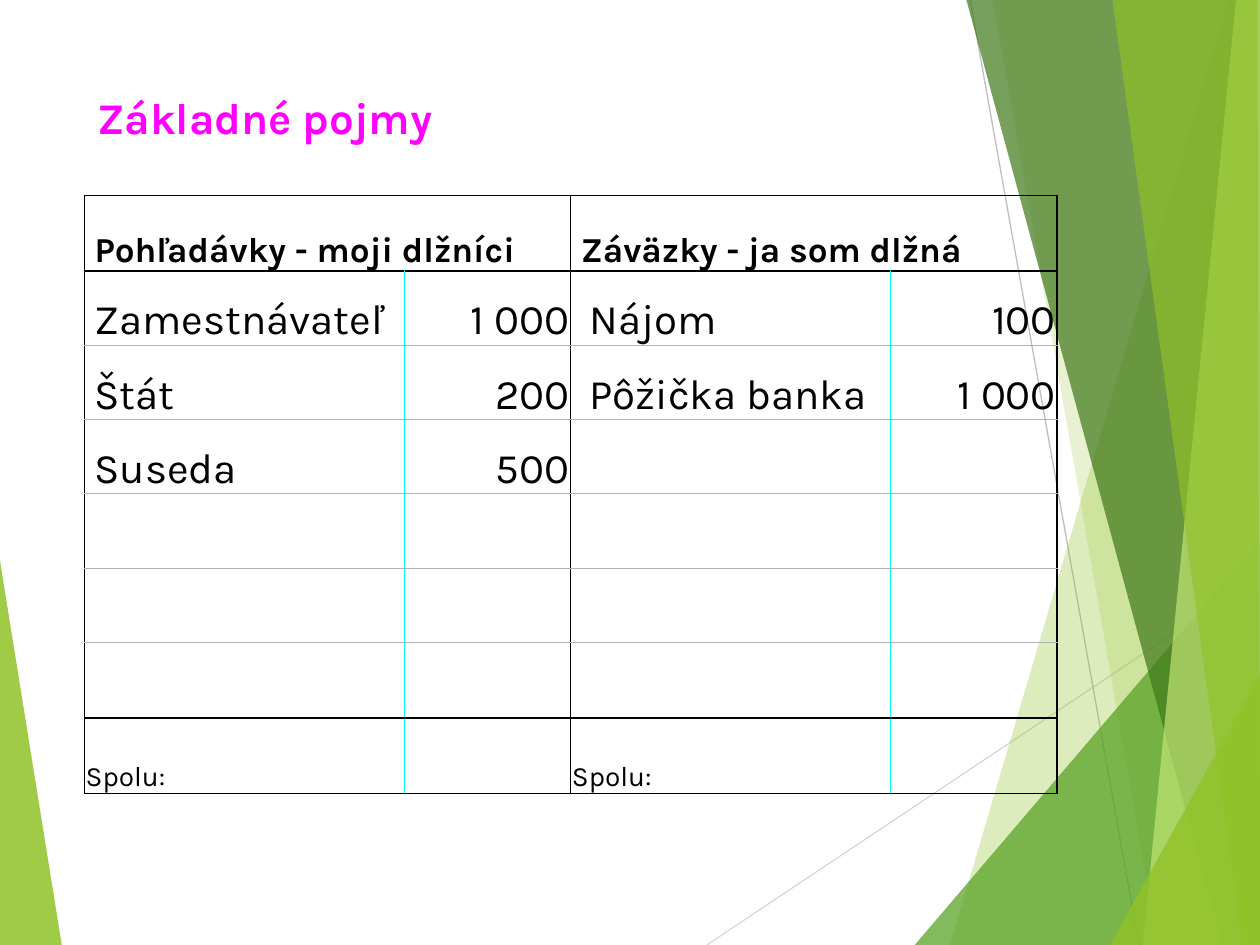
from lxml import etree
from pptx import Presentation
from pptx.dml.color import RGBColor
from pptx.enum.shapes import MSO_CONNECTOR
from pptx.enum.text import MSO_ANCHOR, PP_ALIGN
from pptx.oxml.ns import qn
from pptx.util import Inches, Pt

LINE = MSO_CONNECTOR.STRAIGHT
TOP, BOTTOM = MSO_ANCHOR.TOP, MSO_ANCHOR.BOTTOM
LEFT, RIGHT = PP_ALIGN.LEFT, PP_ALIGN.RIGHT

BLACK = RGBColor(0x00, 0x00, 0x00)
PINK = RGBColor(0xFF, 0x00, 0xFF)
CYAN = RGBColor(0x00, 0xFF, 0xFF)
GREY = RGBColor(0xB2, 0xB2, 0xB2)
PALE = RGBColor(0xD9, 0xD9, 0xD9)
SILVER = RGBColor(0xBF, 0xBF, 0xBF)
LIME = RGBColor(0x90, 0xC2, 0x26)
GREEN = RGBColor(0x54, 0xA0, 0x21)
DARK = RGBColor(0x3F, 0x78, 0x19)
LIGHT = RGBColor(0xC0, 0xE4, 0x74)

WIDE, HIGH = 10, 7.5
SOLID, THIN = (BLACK, 1), (CYAN, 0.5)
RULE = (GREY, 0.5)

# colour, opacity in percent, corners
LEAF = (LIME, 85, [(0, 4.45), (0.49, HIGH), (0, HIGH)])
FACETS = [
    (LIME, 30, [(9.75, 0), (7.54, HIGH), (WIDE, HIGH), (WIDE, 0)]),
    (LIME, 20, [(7.88, 0), (9.19, HIGH), (WIDE, HIGH), (WIDE, 0)]),
    (GREEN, 72, [(7.26, HIGH), (WIDE, 4.29), (WIDE, HIGH)]),
    (DARK, 70, [(7.67, 0), (9.7, HIGH), (WIDE, HIGH), (WIDE, 0)]),
    (LIGHT, 70, [(9.81, 0), (9.07, HIGH), (WIDE, HIGH), (WIDE, 0)]),
    (LIME, 65, [(8.83, 0), (9.86, HIGH), (WIDE, HIGH), (9.98, 0)]),
    (LIME, 80, [(8.81, HIGH), (WIDE, 5.35), (WIDE, HIGH)]),
]
RAYS = [
    (PALE, (5.61, HIGH), (WIDE, 4.57)),
    (SILVER, (7.7, 0), (9.04, HIGH)),
]

COLS = [2.54, 1.32] * 2
ROWS = [0.6] + [0.59] * 5 + [0.6] * 2
DEBTS = [
    ["Pohľadávky - moji dlžníci", "", "Záväzky - ja som dlžná", ""],
    ["Zamestnávateľ", "1 000", "Nájom", "100"],
    ["Štát", "200", "Pôžička banka", "1 000"],
    ["Suseda", "500", "", ""],
    [""] * 4,
    [""] * 4,
    [""] * 4,
    ["Spolu:", "", "Spolu:", ""],
]


def apply(obj, **values):
    for key, value in values.items():
        setattr(obj, key, value)


class Deck:
    def __init__(self, font):
        self.font = font
        self.prs = Presentation()
        apply(self.prs, slide_width=Inches(WIDE), slide_height=Inches(HIGH))
        self.slide = self.prs.slides.add_slide(self.prs.slide_layouts[5])
        self.shapes = self.slide.shapes

    def label(self, frame, text, size, color=BLACK, bold=False, align=LEFT):
        para = frame.paragraphs[0]
        para.alignment = align
        run = para.add_run()
        run.text = text
        apply(run.font, name=self.font, size=Pt(size), bold=bold)
        run.font.color.rgb = color

    def facet(self, color, alpha, points):
        spots = [(Inches(x), Inches(y)) for x, y in points]
        outline = self.shapes.build_freeform(*spots[0])
        outline.add_line_segments(spots[1:], close=True)
        shape = outline.convert_to_shape()
        shape.shadow.inherit = False
        shape.line.fill.background()
        shape.fill.solid()
        shape.fill.fore_color.rgb = color
        tint = shape._element.spPr.find(f"{qn('a:solidFill')}/{qn('a:srgbClr')}")
        etree.SubElement(tint, qn("a:alpha"), val=str(alpha * 1000))

    def ray(self, color, start, end):
        spots = [Inches(v) for v in start + end]
        line = self.shapes.add_connector(LINE, *spots)
        line.line.color.rgb = color
        line.line.width = Pt(0.75)
        etree.SubElement(line._element.spPr, qn("a:effectLst"))

    def title(self, text, box):
        """Fill the title and bring it in front of the backdrop."""
        shape = self.shapes.title
        for key, value in zip(("left", "top", "width", "height"), box):
            setattr(shape, key, Inches(value))
        shape.text_frame.vertical_anchor = TOP
        self.label(shape.text_frame, text, 25, PINK, True)
        self.shapes._spTree.append(shape._element)

    def border(self, cell, sides):
        """Draw left, right, top and bottom, each a (colour, points) pair."""
        props = cell._tc.get_or_add_tcPr()
        for spot, (side, (color, width)) in enumerate(zip("LRTB", sides)):
            line = etree.Element(qn(f"a:ln{side}"), w=str(Pt(width)))
            fill = etree.SubElement(line, qn("a:solidFill"))
            etree.SubElement(fill, qn("a:srgbClr"), val=str(color))
            props.insert(spot, line)

    def table(self, data, left, top):
        size = [Inches(v) for v in (left, top, sum(COLS), sum(ROWS))]
        grid = self.shapes.add_table(len(ROWS), len(COLS), *size).table
        apply(grid, first_row=False, horz_banding=False)
        for col, width in zip(grid.columns, COLS):
            col.width = Inches(width)
        for row, height in zip(grid.rows, ROWS):
            row.height = Inches(height)
        for col in (0, 2):
            grid.cell(0, col).merge(grid.cell(0, col + 1))
        for row, texts in enumerate(data):
            for col, text in enumerate(texts):
                self.cell(grid.cell(row, col), row, col, text)

    def cell(self, cell, row, col, text):
        last = len(ROWS) - 1
        head, name = row == 0, col % 2 == 0
        if not name or row == last:
            inset = 0.01
        elif head:
            inset = 0.08
        else:
            inset = 0.08 if col == 0 else 0.15
        cell.fill.background()
        apply(cell, vertical_anchor=BOTTOM, margin_left=Inches(inset),
              margin_right=Inches(0.01), margin_top=Inches(0.01),
              margin_bottom=0)
        self.border(cell, [
            SOLID if name or head else THIN,
            THIN if name and not head else SOLID,
            SOLID if row in (0, 1, last) else RULE,
            SOLID if row in (0, last - 1, last) else RULE,
        ])
        if text:
            size = {0: 20, last: 16}.get(row, 24)
            self.label(cell.text_frame, text, size, bold=head,
                       align=LEFT if name else RIGHT)


def main():
    deck = Deck("Karla")
    deck.facet(*LEAF)
    for ray in RAYS:
        deck.ray(*ray)
    for facet in FACETS:
        deck.facet(*facet)
    deck.title("Základné pojmy", (0.67, 0.67, 6.94, 1.44))
    deck.table(DEBTS, 0.67, 1.55)
    deck.prs.save("out.pptx")


if __name__ == "__main__":
    main()
